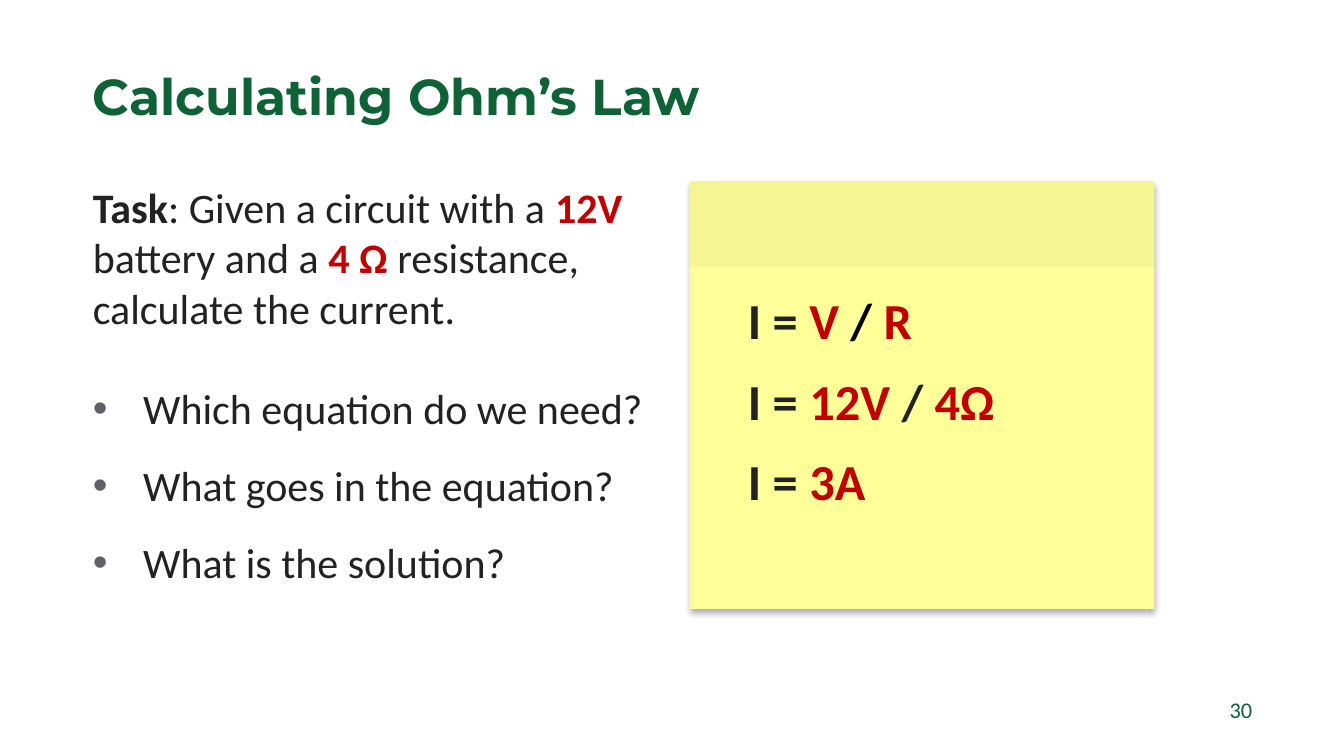
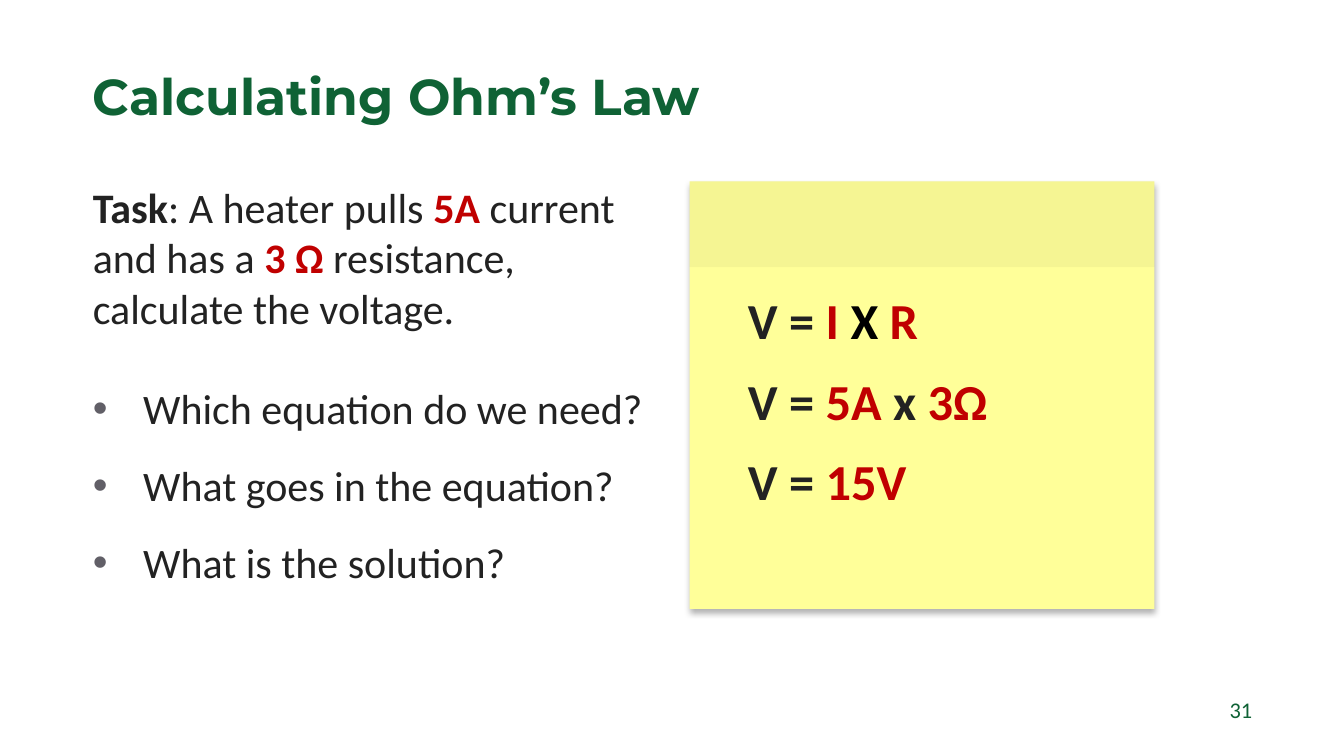
from lxml import etree
from pptx import Presentation, util as u
from pptx.dml.color import RGBColor
from pptx.enum import shapes, text
from pptx.oxml.ns import qn

PX = 9144
COLOURS = {"green": "0F6235", "body": "222222", "value": "C00000", "ink": "000000",
           "bullet": "615F67", "note": "FFFF99"}
LEFT, CONTENT_WIDTH, TOP = 92, 1150, 180
QUESTIONS = ["Which equation do we need?", "What goes in the equation?", "What is the solution?"]
PROBLEMS = [
    dict(number=30,
         task=[": Given a circuit with a ", "12V", " battery and a ", "4 Ω",
               " resistance, calculate the current."],
         unknown="I", operator="/", symbols=("V", "R"), values=("12V", "4Ω"), answer="3A"),
    dict(number=31,
         task=[": A heater pulls ", "5A", " current and has a ", "3 Ω",
               " resistance, calculate the voltage."],
         unknown="V", operator="x", symbols=("I", "R"), values=("5A", "3Ω"), answer="15V"),
]


def px(length):
    return u.Emu(length * PX)


def rgb(name):
    return RGBColor.from_string(COLOURS[name])


def child(parent, tag, **attributes):
    return etree.SubElement(parent, qn(tag), {k: str(v) for k, v in attributes.items()})


def key(words):
    return words, dict(colour="value", bold=True)


def write(paragraph, runs, size, font="Calibri", colour="body", bold=False,
          align=text.PP_ALIGN.LEFT, line=1.0, before=0, bullet=False):
    if bullet:
        properties = paragraph._p.get_or_add_pPr()
        properties.set("marL", str(px(50)))
        properties.set("indent", str(px(-50)))
        child(child(properties, "a:buClr"), "a:srgbClr", val=COLOURS["bullet"])
        child(properties, "a:buFont", typeface="Arial")
        child(properties, "a:buChar", char="•")
    paragraph.alignment, paragraph.line_spacing = align, line
    paragraph.space_before = u.Pt(before)
    for part in runs:
        words, changes = part if isinstance(part, tuple) else (part, {})
        style = dict(colour=colour, bold=bold) | changes
        run = paragraph.add_run()
        run.text = words
        run.font.name, run.font.size = font, u.Pt(size)
        run.font.bold, run.font.color.rgb = style["bold"], rgb(style["colour"])


class Deck:
    """Holds the shared style and the slide being built."""

    def __init__(self):
        self.show = Presentation()
        self.show.slide_width, self.show.slide_height = px(1333), px(750)
        self.slide = None

    def start(self, heading, number):
        self.slide = self.show.slides.add_slide(self.show.slide_layouts[5])
        title = self.slide.shapes.title
        title.left, title.top, title.width, title.height = map(px, (LEFT, 71, CONTENT_WIDTH, 73))
        frame = self.prepare(title.text_frame, 0)
        write(frame.paragraphs[0], [heading], 36, font="Montserrat", colour="green",
              bold=True, line=0.9)
        footer = self.box(LEFT, 691, CONTENT_WIDTH, 40, margin=0)
        write(footer.paragraphs[0], [str(number)], 16, colour="green", align=text.PP_ALIGN.RIGHT)

    def prepare(self, frame, margin):
        frame.word_wrap, frame.auto_size = True, text.MSO_AUTO_SIZE.NONE
        frame.vertical_anchor = text.MSO_ANCHOR.TOP
        if margin is not None:
            frame.margin_left = frame.margin_right = px(margin)
            frame.margin_top = frame.margin_bottom = px(margin)
        return frame

    def box(self, left, top, width, height, margin=None):
        area = self.slide.shapes.add_textbox(*map(px, (left, top, width, height)))
        return self.prepare(area.text_frame, margin)

    def rectangle(self, left, top, width, height, colour, opacity=100, shadow=False):
        shape = self.slide.shapes.add_shape(shapes.MSO_SHAPE.RECTANGLE,
                                            *map(px, (left, top, width, height)))
        shape.shadow.inherit = False
        shape.fill.solid()
        shape.fill.fore_color.rgb = rgb(colour)
        shape.line.fill.background()
        properties = shape._element.spPr
        if opacity < 100:
            child(properties.find(".//" + qn("a:srgbClr")), "a:alpha", val=opacity * 1000)
        if shadow:
            cast = child(properties.find(qn("a:effectLst")), "a:outerShdw", blurRad=u.Pt(4),
                         dist=u.Pt(3), dir=90 * 60000, algn="t", rotWithShape=0)
            child(child(cast, "a:srgbClr", val=COLOURS["ink"]), "a:alpha", val=29000)

    def task(self, parts):
        frame = self.box(LEFT, TOP, 575, 500, margin=0)
        before, first, between, second, after = parts
        write(frame.paragraphs[0], [("Task", dict(bold=True)), before, key(first), between,
                                    key(second), after], 30)
        for index, question in enumerate(QUESTIONS):
            write(frame.add_paragraph(), [question], 30, bullet=True, before=19 if index else 36)

    def note(self, equations):
        self.rectangle(684, TOP, 461, 424, "note", shadow=True)
        self.rectangle(684, TOP, 461, 85, "ink", opacity=4)
        for index, equation in enumerate(equations):
            frame = self.box(732, 282 + 80 * index, 404, 71)
            write(frame.paragraphs[0], equation, 36, bold=True)


def main():
    deck = Deck()
    for problem in PROBLEMS:
        deck.start("Calculating Ohm’s Law", problem["number"])
        deck.task(problem["task"])
        start, operator = problem["unknown"] + " = ", problem["operator"]
        left, right = problem["symbols"]
        first, second = problem["values"]
        deck.note([
            [start, key(left + " "), (operator.upper(), dict(colour="ink")), key(" " + right)],
            [start, key(first + " "), operator + " ", key(second)],
            [start, key(problem["answer"])],
        ])
    deck.show.save("out.pptx")


if __name__ == "__main__":
    main()
